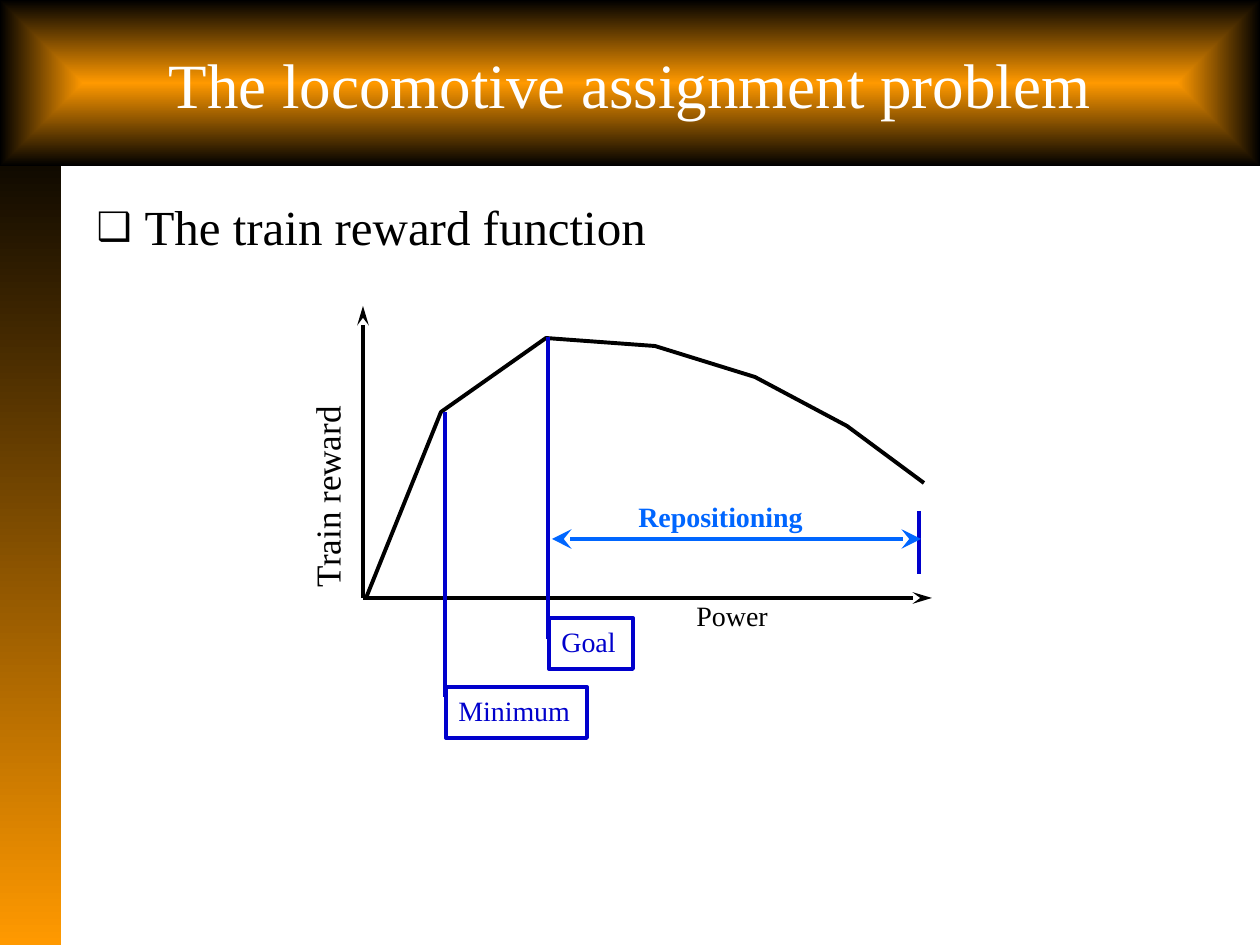
"""Build the slide on the train reward function of the locomotive assignment problem."""
from dataclasses import dataclass

from lxml import etree
from pptx import Presentation
from pptx.dml.color import RGBColor
from pptx.enum.shapes import MSO_CONNECTOR, MSO_SHAPE
from pptx.enum.text import MSO_ANCHOR, MSO_AUTO_SIZE, PP_ALIGN
from pptx.oxml.ns import qn
from pptx.util import Emu, Pt

RECT = MSO_SHAPE.RECTANGLE
STRAIGHT = MSO_CONNECTOR.STRAIGHT
LEFT, CENTER = PP_ALIGN.LEFT, PP_ALIGN.CENTER
TOP, MIDDLE = MSO_ANCHOR.TOP, MSO_ANCHOR.MIDDLE
NO_FIT, GROW = MSO_AUTO_SIZE.NONE, MSO_AUTO_SIZE.SHAPE_TO_FIT_TEXT

SCALE = 914400 / 126
FONT = "Times New Roman"
LINE_WIDTH = 2.25
BLACK, WHITE, ORANGE, DARK = "000000", "FFFFFF", "FF9900", "100A00"
NAVY, BLUE = "0000CC", "0066FF"


@dataclass(frozen=True)
class Line:
    x1: int
    y1: int
    x2: int
    y2: int
    color: str = BLACK
    ends: tuple = ()
    head_width: str = "med"


@dataclass(frozen=True)
class Label:
    text: str
    x: int
    y: int
    w: int
    h: int
    color: str = BLACK
    size: int = 16
    bold: bool = False
    boxed: bool = False
    rotation: int = 0


AXES = [
    Line(363, 598, 363, 306, ends=("tailEnd",)),
    Line(363, 598, 932, 598, ends=("tailEnd",)),
]
REWARD = [(366, 598), (441, 412), (546, 338), (655, 346), (755, 377), (847, 426), (924, 483)]
AXIS_LABELS = [
    Label("Power", 684, 592, 97, 47),
    Label("Train reward", 223, 469, 207, 54, size=20, rotation=270),
]
GROUPS = [
    [Line(548, 337, 548, 639, NAVY), Label("Goal", 549, 618, 84, 51, NAVY, boxed=True)],
    [Line(445, 412, 445, 697, NAVY), Label("Minimum", 446, 687, 141, 51, NAVY, boxed=True)],
    [
        Line(919, 511, 919, 574, NAVY),
        Line(921, 539, 552, 539, BLUE, ("headEnd", "tailEnd"), "lg"),
        Label("Repositioning", 626, 493, 190, 47, BLUE, bold=True),
    ],
]


def px(value: int) -> Emu:
    """Turn pixels into EMU."""
    return Emu(round(value * SCALE))


def rgb(color: str) -> RGBColor:
    """Turn a hex string into a colour."""
    return RGBColor.from_string(color)


def place(sp, x: int, y: int, w: int, h: int) -> None:
    """Move and size a shape."""
    sp.left, sp.top, sp.width, sp.height = px(x), px(y), px(w), px(h)


def stroke(line, color: str) -> None:
    """Give a line its colour and width."""
    line.color.rgb = rgb(color)
    line.width = Pt(LINE_WIDTH)


def gradient(sp, start: str, end: str, angle: int) -> None:
    """Fill a shape with a two-colour linear gradient."""
    sp.fill.gradient()
    sp.fill.gradient_angle = angle
    for stop, color in zip(sp.fill.gradient_stops, (start, end)):
        stop.color.rgb = rgb(color)


def write(sp, text: str, size: int, color: str, bold: bool = False, align=LEFT,
          anchor=TOP, wrap: bool = True, fit=NO_FIT, bullet: str = "") -> None:
    """Write one formatted paragraph into a shape."""
    tf = sp.text_frame
    tf.word_wrap, tf.auto_size, tf.vertical_anchor = wrap, fit, anchor
    p = tf.paragraphs[0]
    if bullet:
        pPr = p._p.get_or_add_pPr()
        pPr.set("marL", str(px(48)))
        pPr.set("indent", str(px(-48)))
        etree.SubElement(pPr, qn("a:buSzPct"), val="80000")
        etree.SubElement(pPr, qn("a:buChar"), char=bullet)
    p.alignment = align
    p.space_before = Pt(0)
    r = p.add_run()
    r.text = text
    r.font.name, r.font.size, r.font.bold = FONT, Pt(size), bold
    r.font.color.rgb = rgb(color)


def draw_line(shapes, item: Line) -> None:
    """Draw a straight line with optional stealth arrowheads."""
    cn = shapes.add_connector(STRAIGHT, px(item.x1), px(item.y1), px(item.x2), px(item.y2))
    stroke(cn.line, item.color)
    for end in item.ends:
        etree.SubElement(cn.line._get_or_add_ln(), qn(f"a:{end}"),
                         type="stealth", w=item.head_width, len="lg")
    etree.SubElement(cn._element.spPr, qn("a:effectLst"))


def draw_label(shapes, item: Label) -> None:
    """Draw a label, framed or plain."""
    box = [px(v) for v in (item.x, item.y, item.w, item.h)]
    if item.boxed:
        sp = shapes.add_shape(RECT, *box)
        sp.shadow.inherit = False
        sp.fill.background()
        stroke(sp.line, item.color)
    else:
        sp = shapes.add_textbox(*box)
    sp.rotation = item.rotation
    write(sp, item.text, item.size, item.color, item.bold, wrap=False, fit=GROW)


def draw_curve(shapes, points: list) -> None:
    """Draw an open polyline through the points."""
    builder = shapes.build_freeform(*points[0], scale=SCALE)
    builder.add_line_segments(points[1:], close=False)
    sp = builder.convert_to_shape()
    sp.shadow.inherit = False
    sp.fill.background()
    stroke(sp.line, BLACK)


def draw_frame(slide) -> None:
    """Draw the side bar, the title band and the body line."""
    shapes = slide.shapes
    bar = shapes.add_shape(RECT, 0, px(165), px(61), px(780))
    bar.shadow.inherit = False
    bar.line.fill.background()
    gradient(bar, DARK, ORANGE, 270)
    shapes._spTree.insert(2, bar._element)

    title, body = shapes.title, slide.placeholders[1]
    place(title, 0, 0, 1260, 166)
    gradient(title, ORANGE, BLACK, 0)
    lin = title._element.spPr.find(qn("a:gradFill")).find(qn("a:lin"))
    shade = etree.Element(qn("a:path"), path="shape")
    etree.SubElement(shade, qn("a:fillToRect"), l="50000", t="50000", r="50000", b="50000")
    lin.getparent().replace(lin, shade)
    write(title, "The locomotive assignment problem", 36, WHITE, align=CENTER, anchor=MIDDLE)

    place(body, 84, 185, 1155, 72)
    body.text_frame.margin_top = px(12)
    write(body, "The train reward function", 28, BLACK, bullet="❑")


def main() -> None:
    """Build and save the slide."""
    prs = Presentation()
    prs.slide_width, prs.slide_height = px(1260), px(945)
    slide = prs.slides.add_slide(prs.slide_layouts[1])
    draw_frame(slide)
    for axis in AXES:
        draw_line(slide.shapes, axis)
    draw_curve(slide.shapes, REWARD)
    for label in AXIS_LABELS:
        draw_label(slide.shapes, label)
    for items in GROUPS:
        group = slide.shapes.add_group_shape()
        for item in items:
            draw = draw_line if isinstance(item, Line) else draw_label
            draw(group.shapes, item)
    prs.save("out.pptx")


if __name__ == "__main__":
    main()
